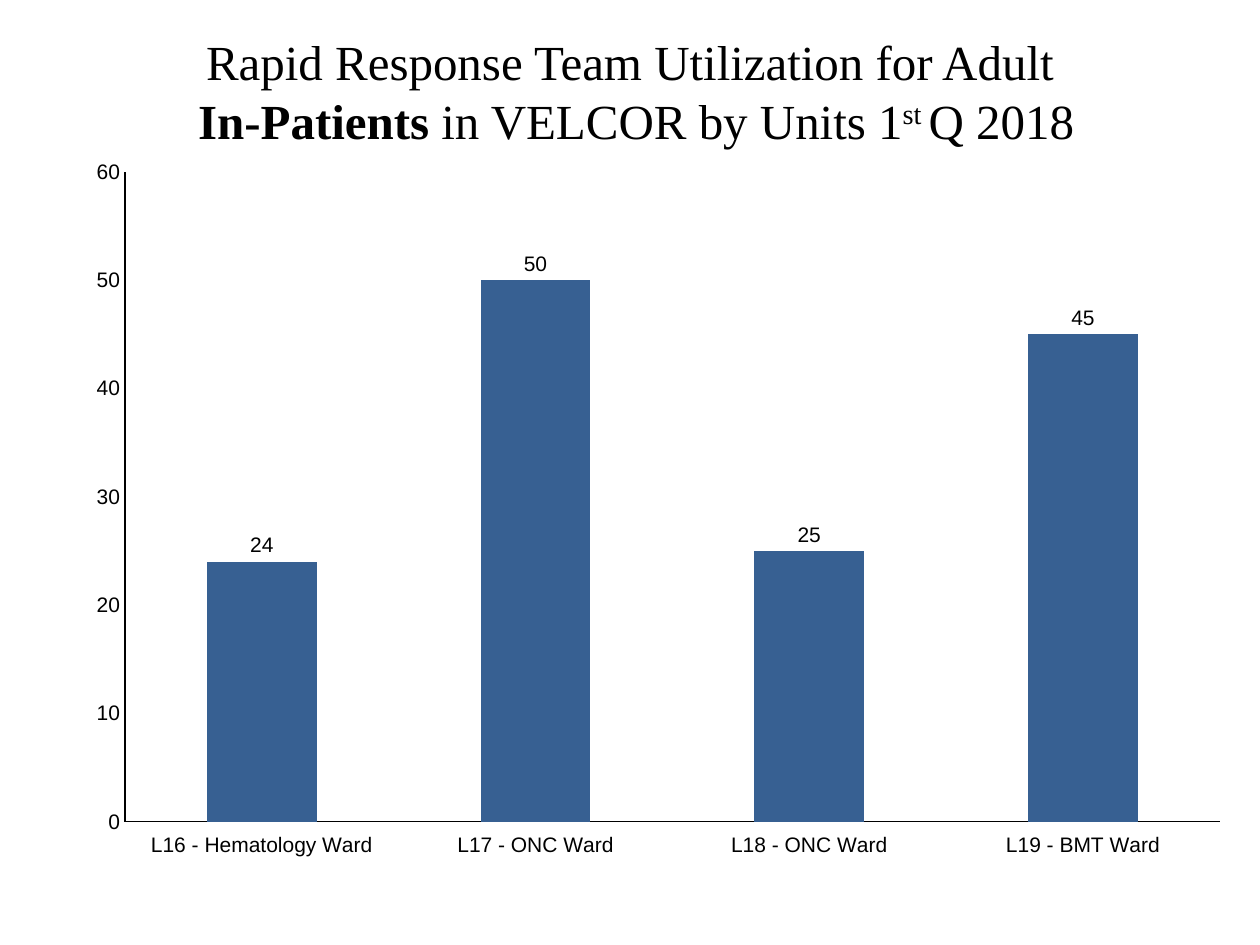
from typing import NamedTuple

from lxml import etree
from pptx import Presentation
from pptx.chart.data import CategoryChartData
from pptx.dml.color import RGBColor
from pptx.enum.chart import XL_CHART_TYPE, XL_LABEL_POSITION, XL_TICK_LABEL_POSITION, XL_TICK_MARK
from pptx.enum.text import MSO_ANCHOR, PP_ALIGN
from pptx.oxml.ns import qn
from pptx.util import Emu, Pt

COLUMN_CLUSTERED = XL_CHART_TYPE.COLUMN_CLUSTERED
OUTSIDE_END = XL_LABEL_POSITION.OUTSIDE_END
LABELS_LOW = XL_TICK_LABEL_POSITION.LOW
NO_TICK = XL_TICK_MARK.NONE
MIDDLE = MSO_ANCHOR.MIDDLE
CENTER = PP_ALIGN.CENTER

PX_PER_INCH = 126
COLORS = {"text": "000000", "bar": "376092"}


class Box(NamedTuple):
    left: int
    top: int
    width: int
    height: int


class Ward(NamedTuple):
    name: str
    calls: int


class TitleRun(NamedTuple):
    text: str
    bold: bool = False
    superscript: bool = False


TITLE_BOX = Box(63, 38, 1134, 157)
CHART_BOX = Box(15, 145, 1230, 784)
PLOT_BOX = Box(125, 172, 1095, 650)

TITLE_RUNS = [
    TitleRun(" In-Patients ", bold=True),
    TitleRun("in VELCOR by Units 1"),
    TitleRun("st ", superscript=True),
    TitleRun("Q 2018"),
]
WARDS = [
    Ward("L16 - Hematology Ward", 24),
    Ward("L17 - ONC Ward", 50),
    Ward("L18 - ONC Ward", 25),
    Ward("L19 - BMT Ward", 45),
]


def px(length: int) -> Emu:
    return Emu(round(length * 914400 / PX_PER_INCH))


def color(name: str) -> RGBColor:
    return RGBColor.from_string(COLORS[name])


def style_font(font, name: str, size: int) -> None:
    font.name = name
    font.size = Pt(size)
    font.color.rgb = color("text")


def add_title(slide) -> None:
    title = slide.shapes.title
    title.left, title.top, title.width, title.height = map(px, TITLE_BOX)
    frame = title.text_frame
    frame.word_wrap = True
    frame.vertical_anchor = MIDDLE
    frame.margin_top = 0
    frame.margin_bottom = px(52)
    paragraph = frame.paragraphs[0]
    paragraph.alignment = CENTER
    style_font(paragraph.font, "Times New Roman", 28)
    paragraph.add_run().text = "Rapid Response Team Utilization for Adult"
    paragraph.add_line_break()
    for part in TITLE_RUNS:
        run = paragraph.add_run()
        run.text = part.text
        run.font.bold = part.bold
        if part.superscript:
            run.font._element.set("baseline", "30000")
    for run in paragraph.runs:
        style_font(run.font, "Times New Roman", 28)


def style_axis(axis) -> None:
    axis.has_title = False
    axis.has_major_gridlines = False
    axis.major_tick_mark = NO_TICK
    axis.minor_tick_mark = NO_TICK
    axis.format.line.color.rgb = color("text")
    axis.format.line.width = Pt(0)
    style_font(axis.tick_labels.font, "Arial", 12)


def place_plot(chart) -> None:
    """Fix the inner plot area as fractions of the chart frame."""
    plot_area = chart._chartSpace.chart.plotArea
    for old_layout in plot_area.findall(qn("c:layout")):
        plot_area.remove(old_layout)
    layout = etree.Element(qn("c:layout"))
    plot_area.insert(0, layout)
    manual = etree.SubElement(layout, qn("c:manualLayout"))
    settings = {
        "layoutTarget": "inner",
        "xMode": "edge",
        "yMode": "edge",
        "x": (PLOT_BOX.left - CHART_BOX.left) / CHART_BOX.width,
        "y": (PLOT_BOX.top - CHART_BOX.top) / CHART_BOX.height,
        "w": PLOT_BOX.width / CHART_BOX.width,
        "h": PLOT_BOX.height / CHART_BOX.height,
    }
    for tag, value in settings.items():
        etree.SubElement(manual, qn(f"c:{tag}")).set("val", str(value))


def add_ward_chart(slide) -> None:
    data = CategoryChartData(number_format="#0")
    data.categories = [ward.name for ward in WARDS]
    data.add_series("Series 1", [ward.calls for ward in WARDS])
    chart = slide.shapes.add_chart(COLUMN_CLUSTERED, *map(px, CHART_BOX), data).chart
    chart.has_title = False
    chart.has_legend = False
    style_font(chart.font, "Calibri", 10)
    place_plot(chart)

    style_axis(chart.category_axis)
    chart.category_axis.tick_label_position = LABELS_LOW
    value_axis = chart.value_axis
    style_axis(value_axis)
    value_axis.minimum_scale = 0
    value_axis.maximum_scale = 60
    value_axis.major_unit = 10
    value_axis.tick_labels.number_format = "#0"
    value_axis.tick_labels.number_format_is_linked = False

    plot = chart.plots[0]
    plot.gap_width = 150
    plot.vary_by_categories = False
    series = plot.series[0]
    series.format.fill.solid()
    series.format.fill.fore_color.rgb = color("bar")
    labels = series.data_labels
    labels.show_value = True
    labels.position = OUTSIDE_END
    labels.number_format = "#0"
    labels.number_format_is_linked = False
    style_font(labels.font, "Arial", 12)


def main() -> None:
    presentation = Presentation()
    presentation.slide_width = px(1260)
    presentation.slide_height = px(945)
    title_only = presentation.slide_layouts[5]
    slide = presentation.slides.add_slide(title_only)
    add_title(slide)
    add_ward_chart(slide)
    presentation.save("out.pptx")


if __name__ == "__main__":
    main()
